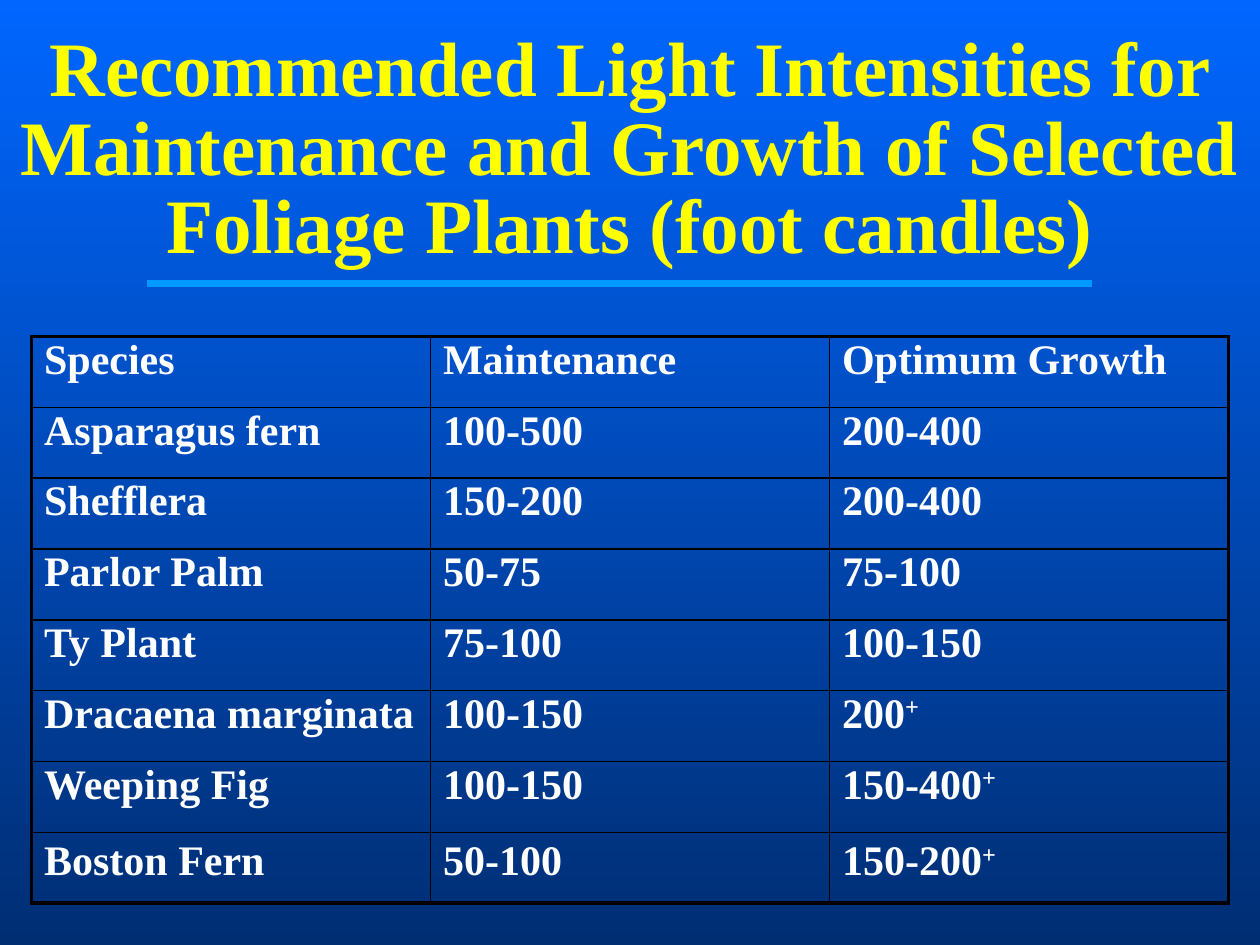
import pptx
import pptx.dml.color
import pptx.enum.shapes
import pptx.enum.text
import pptx.oxml
import pptx.oxml.ns
import pptx.util
from pptx.util import Inches

ROWS = [
    ("Species", "Maintenance", "Optimum Growth"),
    ("Asparagus fern", "100-500", "200-400"),
    ("Shefflera", "150-200", "200-400"),
    ("Parlor Palm", "50-75", "75-100"),
    ("Ty Plant", "75-100", "100-150"),
    ("Dracaena marginata", "100-150", "200+"),
    ("Weeping Fig", "100-150", "150-400+"),
    ("Boston Fern", "50-100", "150-200+"),
]


def color(value):
    return pptx.dml.color.RGBColor.from_string(value)


def apply(target, formats):
    for name, value in formats.items():
        setattr(target, name, value)


class SlideBuilder:
    font = {"name": "Times New Roman", "bold": True}
    tight = 0.85
    thin, thick = 1, 2.25

    def __init__(self, slide):
        self.slide = slide

    def background(self, top, bottom):
        fill = self.slide.background.fill
        fill.gradient()
        fill.gradient_angle = 270
        for stop, value in zip(fill.gradient_stops, (top, bottom)):
            stop.color.rgb = color(value)

    def add_text(self, para, text, size, value):
        """Add text to a paragraph, raising a trailing plus sign."""
        body = text.rstrip("+")
        for part in filter(None, (body, text[len(body):])):
            span = para.add_run()
            span.text = part
            apply(span.font, {**self.font, "size": pptx.util.Pt(size)})
            span.font.color.rgb = color(value)
            if part == "+":
                span._r.get_or_add_rPr().set("baseline", "30000")

    def title(self, text, left, top, width, height):
        box = self.slide.shapes.add_textbox(left, top, width, height)
        apply(box.text_frame, {
            "word_wrap": True,
            "vertical_anchor": pptx.enum.text.MSO_ANCHOR.MIDDLE,
        })
        para = box.text_frame.paragraphs[0]
        apply(para, {
            "alignment": pptx.enum.text.PP_ALIGN.CENTER,
            "line_spacing": self.tight,
        })
        self.add_text(para, text, 44, "FFFF00")

    def rule(self, left, right, y, value, width):
        line = self.slide.shapes.add_connector(
            pptx.enum.shapes.MSO_CONNECTOR.STRAIGHT, left, y, right, y)
        line.line.color.rgb = color(value)
        line.line.width = pptx.util.Pt(width)
        line._element.spPr.append(pptx.oxml.parse_xml(
            f"<a:effectLst {pptx.oxml.ns.nsdecls('a')}/>"))

    def borders(self, cell, outer_sides):
        """Draw black cell borders, thick where the side is a table edge."""
        properties = cell._tc.get_or_add_tcPr()
        for side, outer in outer_sides.items():
            width = pptx.util.Pt(self.thick if outer else self.thin)
            properties.append(pptx.oxml.parse_xml(
                f'<a:ln{side} {pptx.oxml.ns.nsdecls("a")} w="{width}">'
                '<a:solidFill><a:srgbClr val="000000"/></a:solidFill>'
                f'</a:ln{side}>'))

    def table(self, rows, left, top, width, height):
        last_row, last_column = len(rows) - 1, len(rows[0]) - 1
        table = self.slide.shapes.add_table(
            len(rows), len(rows[0]), left, top, width, height).table
        apply(table, {"first_row": False, "horz_banding": False})
        for i, row in enumerate(rows):
            for j, text in enumerate(row):
                cell = table.cell(i, j)
                self.borders(cell, {"L": j == 0, "R": j == last_column,
                                    "T": i == 0, "B": i == last_row})
                cell.fill.background()
                para = cell.text_frame.paragraphs[0]
                para.line_spacing = 1.0 if i == last_row else self.tight
                self.add_text(para, text, 24, "FFFFFF")


def main():
    deck = pptx.Presentation()
    apply(deck, {"slide_width": Inches(10), "slide_height": Inches(7.5)})
    page = SlideBuilder(deck.slides.add_slide(deck.slide_layouts[6]))
    page.background("0066FF", "002E73")
    page.title("Recommended Light Intensities for Maintenance and Growth "
               "of Selected Foliage Plants (foot candles)",
               Inches(0), Inches(0.58), Inches(10), Inches(1.25))
    page.table(ROWS, Inches(0.25), Inches(2.67), Inches(9.5), Inches(4.5))
    page.rule(Inches(1.17), Inches(8.67), Inches(2.25), "0099FF", 4.5)
    deck.save("out.pptx")


if __name__ == "__main__":
    main()
